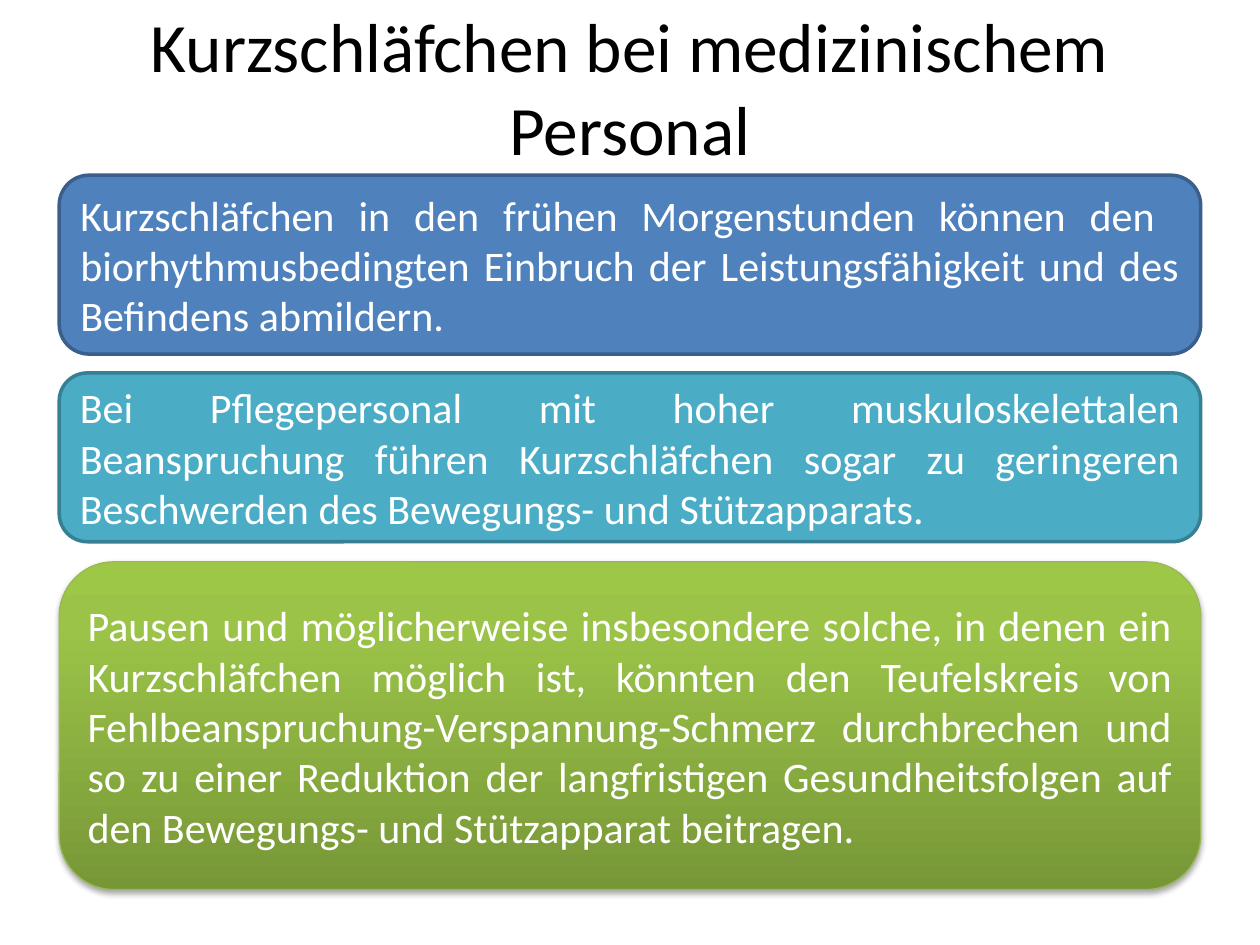
import pptx
import pptx.dml.color
import pptx.enum.shapes
import pptx.enum.text
import pptx.oxml
import pptx.oxml.ns
import pptx.util

Inches = pptx.util.Inches
Pt = pptx.util.Pt
ALIGN = pptx.enum.text.PP_ALIGN

COLORS = {
    "title": "000000",
    "text": "FFFFFF",
    "blue": "4F81BD",
    "blue_line": "3A5F8C",
    "teal": "4BACC6",
    "teal_line": "377F92",
    "green_line": "98B955",
    "shadow": "000000",
}
GREEN_STOPS = [(0, "779737"), (80, "9BC348"), (100, "9DC746")]
LEFT, WIDTH = 0.47, 9.06

MORNING = (
    "Kurzschläfchen in den frühen Morgenstunden können den  biorhythmusbedingten "
    "Einbruch der Leistungsfähigkeit und des Befindens abmildern."
)
NURSING = (
    "Bei Pflegepersonal mit hoher muskuloskelettalen Beanspruchung führen "
    "Kurzschläfchen sogar zu geringeren Beschwerden des Bewegungs- und Stützapparats."
)
BREAKS = (
    "Pausen und möglicherweise insbesondere solche, in denen ein Kurzschläfchen "
    "möglich ist, könnten den Teufelskreis von Fehlbeanspruchung-Verspannung-Schmerz "
    "durchbrechen und so zu einer Reduktion der langfristigen Gesundheitsfolgen auf "
    "den Bewegungs- und Stützapparat beitragen."
)


def rgb(name):
    return pptx.dml.color.RGBColor.from_string(COLORS[name])


def write_text(shape, text, size=24, color="text", align=ALIGN.JUSTIFY):
    frame = shape.text_frame
    frame.word_wrap = True
    frame.vertical_anchor = pptx.enum.text.MSO_ANCHOR.MIDDLE
    paragraph = frame.paragraphs[0]
    paragraph.alignment = align
    run = paragraph.add_run()
    run.text = text
    run.font.name = "Calibri"
    run.font.size = Pt(size)
    run.font.color.rgb = rgb(color)


def add_title(slide, text):
    box = slide.shapes.add_textbox(Inches(0.5), Inches(0.3), Inches(9), Inches(0.77))
    write_text(box, text, size=39.6, color="title", align=ALIGN.CENTER)


def add_panel(slide, text, top, height, line, line_width=2, fill=None):
    panel = slide.shapes.add_shape(
        pptx.enum.shapes.MSO_SHAPE.ROUNDED_RECTANGLE,
        Inches(LEFT), Inches(top), Inches(WIDTH), Inches(height),
    )
    panel.shadow.inherit = False
    if fill:
        panel.fill.solid()
        panel.fill.fore_color.rgb = rgb(fill)
    panel.line.color.rgb = rgb(line)
    panel.line.width = Pt(line_width)
    write_text(panel, text)
    return panel


def set_gradient(shape, stops, angle):
    shape.fill.gradient()
    shape.fill.gradient_angle = angle
    stop_xml = "".join(
        f'<a:gs pos="{position * 1000}"><a:srgbClr val="{color}"/></a:gs>'
        for position, color in stops
    )
    namespace = pptx.oxml.ns.nsdecls("a")
    stop_list = pptx.oxml.parse_xml(f"<a:gsLst {namespace}>{stop_xml}</a:gsLst>")
    old_list = shape.element.spPr.find(".//" + pptx.oxml.ns.qn("a:gsLst"))
    old_list.getparent().replace(old_list, stop_list)


def set_shadow(shape, blur, distance, opacity):
    shadow = pptx.oxml.parse_xml(
        f'<a:outerShdw {pptx.oxml.ns.nsdecls("a")} blurRad="{Pt(blur)}" '
        f'dist="{Pt(distance)}" dir="5400000" rotWithShape="0">'
        f'<a:srgbClr val="{COLORS["shadow"]}"><a:alpha val="{opacity * 1000}"/>'
        "</a:srgbClr></a:outerShdw>"
    )
    shape.element.spPr.find(pptx.oxml.ns.qn("a:effectLst")).append(shadow)


def main():
    presentation = pptx.Presentation()
    presentation.slide_width = Inches(10)
    presentation.slide_height = Inches(7.5)
    slide = presentation.slides.add_slide(presentation.slide_layouts[6])

    add_title(slide, "Kurzschläfchen bei medizinischem Personal")
    add_panel(slide, MORNING, 1.39, 1.42, "blue_line", fill="blue")
    add_panel(slide, NURSING, 2.96, 1.34, "teal_line", fill="teal")
    breaks_panel = add_panel(slide, BREAKS, 4.46, 2.6, "green_line", line_width=0.75)
    set_gradient(breaks_panel, GREEN_STOPS, angle=90)
    set_shadow(breaks_panel, blur=3.1, distance=1.8, opacity=35)

    presentation.save("out.pptx")


if __name__ == "__main__":
    main()
